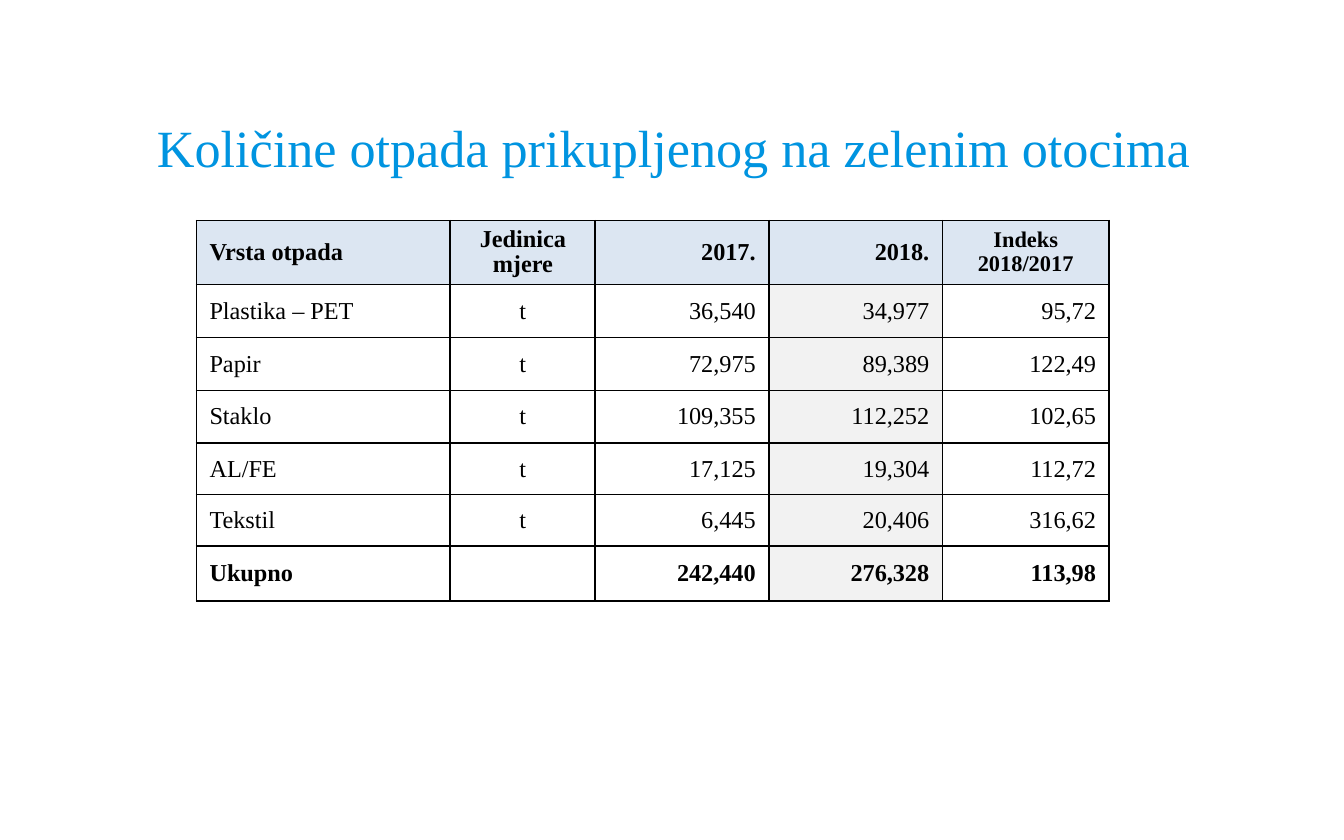
from lxml import etree
from pptx import Presentation
from pptx.dml.color import RGBColor
from pptx.enum import text
from pptx.oxml import ns
from pptx.util import Cm, Pt

# Content
TITLE = "Količine otpada prikupljenog na zelenim otocima"
ROWS = [
    ("Vrsta otpada", "Jedinica mjere", "2017.", "2018.", "Indeks 2018/2017"),
    ("Plastika – PET", "t", "36,540", "34,977", "95,72"),
    ("Papir", "t", "72,975", "89,389", "122,49"),
    ("Staklo", "t", "109,355", "112,252", "102,65"),
    ("AL/FE", "t", "17,125", "19,304", "112,72"),
    ("Tekstil", "t", "6,445", "20,406", "316,62"),
    ("Ukupno", "", "242,440", "276,328", "113,98"),
]

# Look
FONT = "Times New Roman"
COLORS = {"title": "0094E0", "text": "000000", "border": "000000",
          "header": "DCE6F2", "highlight": "F2F2F2"}
LEFT, CENTER, RIGHT = (text.PP_ALIGN.LEFT, text.PP_ALIGN.CENTER,
                       text.PP_ALIGN.RIGHT)
ALIGNMENTS = [LEFT, CENTER, RIGHT, RIGHT, RIGHT]
WIDTHS = [4.8, 2.74, 3.28, 3.28, 3.15]
HEIGHTS = [1.21, 1, 1, 1, 0.97, 0.97, 1.04]
HIGHLIGHT_COLUMN, INDEX_COLUMN = 3, 4
LAST_ROW = len(ROWS) - 1


def style_font(font, size, color, bold=False):
    font.name, font.size, font.bold = FONT, Pt(size), bold
    font.color.rgb = RGBColor.from_string(COLORS[color])


def add_borders(cell):
    properties = cell._tc.get_or_add_tcPr()
    for side in ("lnL", "lnR", "lnT", "lnB"):
        line = etree.SubElement(properties, ns.qn("a:" + side), w=str(Pt(1)))
        fill = etree.SubElement(line, ns.qn("a:solidFill"))
        etree.SubElement(fill, ns.qn("a:srgbClr"), val=COLORS["border"])


def fill_cell(cell, color):
    if color:
        cell.fill.solid()
        cell.fill.fore_color.rgb = RGBColor.from_string(COLORS[color])
    else:
        cell.fill.background()


def format_cell(cell, row, column):
    header = row == 0
    cell.vertical_anchor = text.MSO_ANCHOR.MIDDLE
    cell.margin_left = cell.margin_right = Cm(0.25)
    cell.margin_top = cell.margin_bottom = Cm(0.1)
    para = cell.text_frame.paragraphs[0]
    para.alignment = ALIGNMENTS[column]
    if header:
        para.alignment = CENTER if column == INDEX_COLUMN else para.alignment
        para.line_spacing = 0.95
    size = 12 if header and column == INDEX_COLUMN else 13
    for span in para.runs:
        style_font(span.font, size, "text", row in (0, LAST_ROW))
    add_borders(cell)
    highlight = "highlight" if column == HIGHLIGHT_COLUMN else None
    fill_cell(cell, "header" if header else highlight)


deck = Presentation()
deck.slide_width, deck.slide_height = Cm(25.4), Cm(15.88)
page = deck.slides.add_slide(deck.slide_layouts[5])

# Title
title = page.shapes.title
title.left, title.top, title.width, title.height = (
    Cm(1.3), Cm(1.35), Cm(22.86), Cm(2.84))
title.text_frame.text = TITLE
title.text_frame.vertical_anchor = text.MSO_ANCHOR.MIDDLE
heading = title.text_frame.paragraphs[0]
heading.alignment = CENTER
style_font(heading.runs[0].font, 28, "title")

# Table of collected waste
table = page.shapes.add_table(
    len(ROWS), len(WIDTHS), Cm(3.71), Cm(4.17),
    Cm(sum(WIDTHS)), Cm(sum(HEIGHTS))).table
table.first_row = table.horz_banding = False
for column, width in zip(table.columns, WIDTHS):
    column.width = Cm(width)
for row, height in zip(table.rows, HEIGHTS):
    row.height = Cm(height)
for r, values in enumerate(ROWS):
    for c, value in enumerate(values):
        cell = table.cell(r, c)
        cell.text_frame.text = value
        format_cell(cell, r, c)

deck.save("out.pptx")
